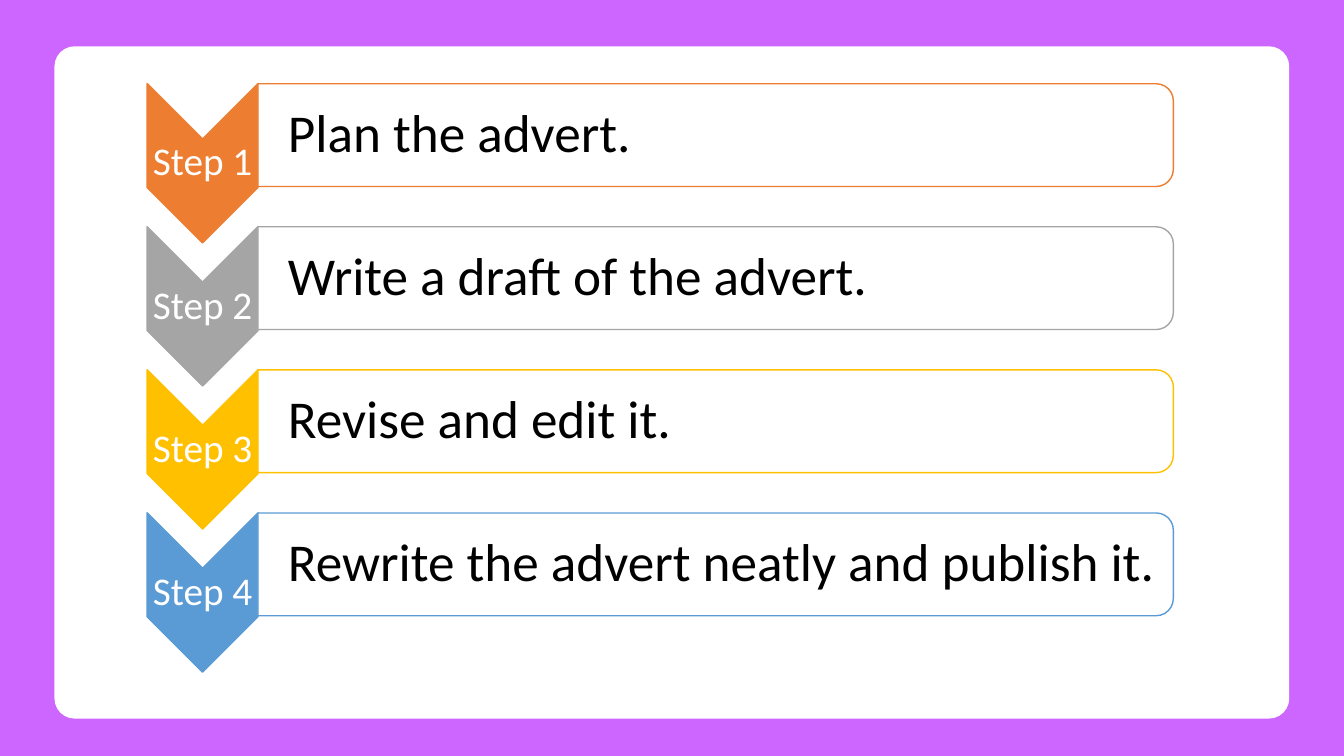
from lxml import etree
from pptx import Presentation
from pptx.dml.color import RGBColor
from pptx.enum.shapes import MSO_SHAPE
from pptx.enum.text import MSO_ANCHOR, PP_ALIGN
from pptx.oxml.ns import qn
from pptx.util import Pt

CHEVRON = MSO_SHAPE.CHEVRON
BAR = MSO_SHAPE.ROUND_2_SAME_RECTANGLE
PANEL = MSO_SHAPE.ROUNDED_RECTANGLE
MIDDLE = MSO_ANCHOR.MIDDLE
LEFT, CENTER = PP_ALIGN.LEFT, PP_ALIGN.CENTER

# Content
STEPS = [
    ("Step 1", "Plan the advert.", "ED7D31"),
    ("Step 2", "Write a draft of the advert.", "A5A5A5"),
    ("Step 3", "Revise and edit it.", "FFC000"),
    ("Step 4", "Rewrite the advert neatly and publish it.", "5B9BD5"),
]
FONT = "Calibri"
BACKGROUND, WHITE, BLACK = "CC66FF", "FFFFFF", "000000"

# Layout in points
STEP_PITCH = 102.2
CHEVRON_LENGTH, CHEVRON_WIDTH = 113.8, 79.2
CHEVRON_CENTER = (144.7, 116.6)
BAR_LENGTH, BAR_HEIGHT = 653.8, 73.4
BAR_CENTER = (511.2, 96.5)
LABEL_HEIGHT = 34
BAR_TEXT_WIDTH, BAR_TEXT_HEIGHT = 650.2, 66.2
HANGING_INDENT = 22.5


def color(hex_code):
    return RGBColor.from_string(hex_code)


def add_shape(kind, left, top, width, height, fill, line=None):
    shape = slide.shapes.add_shape(kind, Pt(left), Pt(top), Pt(width), Pt(height))
    shape.shadow.inherit = False
    shape.fill.solid()
    shape.fill.fore_color.rgb = color(fill)
    if line:
        shape.line.color.rgb = color(line)
        shape.line.width = Pt(1)
    else:
        shape.line.fill.background()
    return shape


def add_turned_shape(kind, center, length, breadth, fill, line):
    """Add a shape turned a quarter clockwise about its center."""
    x, y = center
    shape = add_shape(kind, x - breadth / 2, y - length / 2, breadth, length, fill, line)
    shape.rotation = 90
    return shape


def add_text(text, left, top, width, height, size, text_color, align, inset, left_inset):
    box = slide.shapes.add_textbox(Pt(left), Pt(top), Pt(width), Pt(height))
    frame = box.text_frame
    frame.word_wrap = True
    frame.vertical_anchor = MIDDLE
    frame.margin_top = frame.margin_right = frame.margin_bottom = Pt(inset)
    frame.margin_left = Pt(left_inset)
    paragraph = frame.paragraphs[0]
    paragraph.alignment = align
    paragraph.line_spacing = 0.9
    run = paragraph.add_run()
    run.text = text
    run.font.name = FONT
    run.font.size = Pt(size)
    run.font.color.rgb = color(text_color)
    return paragraph


presentation = Presentation()
presentation.slide_width, presentation.slide_height = Pt(960), Pt(540)
slide = presentation.slides.add_slide(presentation.slide_layouts[6])

# Background and white panel
slide.background.fill.solid()
slide.background.fill.fore_color.rgb = color(BACKGROUND)
panel = add_shape(PANEL, 38.9, 33.1, 882, 480.2, WHITE)
panel.adjustments[0] = 0.03

# Steps: a chevron with its label, then a bar with its sentence
for index, (label, sentence, accent) in enumerate(STEPS):
    offset = index * STEP_PITCH
    chevron_x, chevron_y = CHEVRON_CENTER[0], CHEVRON_CENTER[1] + offset
    bar_x, bar_y = BAR_CENTER[0], BAR_CENTER[1] + offset

    add_turned_shape(CHEVRON, (chevron_x, chevron_y), CHEVRON_WIDTH, CHEVRON_LENGTH,
                     accent, accent)
    add_text(label, chevron_x - CHEVRON_WIDTH / 2, chevron_y - LABEL_HEIGHT / 2,
             CHEVRON_WIDTH, LABEL_HEIGHT, 28, WHITE, CENTER, 1.4, 1.4)

    bar = add_turned_shape(BAR, (bar_x, bar_y), BAR_LENGTH, BAR_HEIGHT, WHITE, accent)
    fill_color = bar.fill._xPr.find(qn("a:solidFill"))[0]
    etree.SubElement(fill_color, qn("a:alpha")).set("val", "90000")
    paragraph = add_text(sentence, bar_x - BAR_LENGTH / 2, bar_y - BAR_TEXT_HEIGHT / 2,
                         BAR_TEXT_WIDTH, BAR_TEXT_HEIGHT, 38, BLACK, LEFT, 2, 21.4)
    paragraph.level = 1
    properties = paragraph._p.get_or_add_pPr()
    properties.set("marL", str(Pt(HANGING_INDENT)))
    properties.set("indent", str(-Pt(HANGING_INDENT)))

presentation.save("out.pptx")
